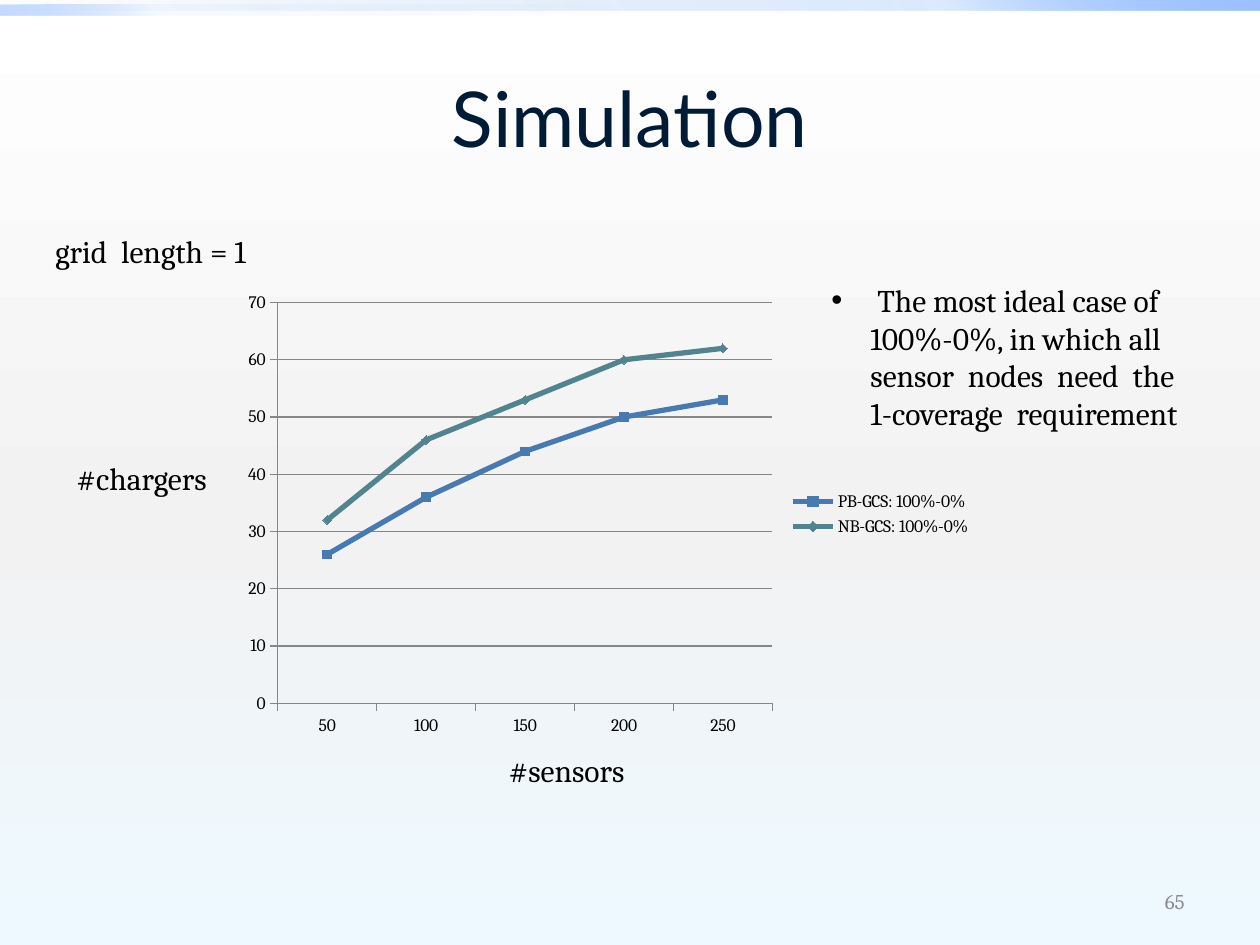
from lxml.etree import SubElement
from pptx import Presentation
from pptx.chart.data import CategoryChartData
from pptx.dml.color import RGBColor
from pptx.enum.chart import XL_CHART_TYPE, XL_LEGEND_POSITION, XL_MARKER_STYLE, XL_TICK_MARK
from pptx.enum.shapes import MSO_SHAPE
from pptx.enum.text import MSO_ANCHOR, PP_ALIGN
from pptx.oxml.ns import qn
from pptx.util import Inches, Pt

BODY_FONT = "Cambria"
AXIS_COLOR = "868686"

# Gradient stops: position %, colour, opacity %
BACKGROUND = [(0, "FFFFFF", 100), (55, "F2F2F2", 100), (100, "EEF9FF", 100)]
BARS = [
    ((0, 0, 10, 0.08), [(0, "0058B7", 0), (75, "4F95FF", 20), (100, "9EC2FF", 100)], 315),
    ((0, 0.04, 5, 0.08), [(0, "0058B7", 0), (75, "4F95FF", 5), (100, "9EC2FF", 60)], 135),
]

TITLE = ("Simulation", (0.5, 0.3, 9, 1.25))
LABELS = [
    ("grid  length = 1", (0.34, 1.79, 1.99, 0.4)),
    ("#chargers", (0.51, 3.59, 1.42, 0.4)),
    ("#sensors", (3.94, 5.91, 1.34, 0.4)),
]
REMARK = (
    " The most ideal case of 100%-0%, in which all sensor  nodes  need  the  1-coverage  requirement",
    (6.5, 2.18, 3.19, 1.31),
)
PAGE_NUMBER = ("65", (7.17, 6.95, 2.33, 0.4))

CHART_BOX = (1.85, 2.25, 5.96, 3.66)
SENSORS = ["50", "100", "150", "200", "250"]
SERIES = [
    ("PB-GCS: 100%-0%", [26, 36, 44, 50, 53], "477AB1", XL_MARKER_STYLE.SQUARE),
    ("NB-GCS: 100%-0%", [32, 46, 53, 60, 62], "51848E", XL_MARKER_STYLE.DIAMOND),
]


def rgb(color):
    return RGBColor.from_string(color)


def place(box):
    return [Inches(length) for length in box]


def fill_gradient(owner, element, stops, angle):
    """Fill the owner with a gradient; angle is in clockwise degrees."""
    owner.fill.solid()
    solid = element.find(".//" + qn("a:solidFill"))
    gradient = solid.makeelement(qn("a:gradFill"), {"rotWithShape": "1"})
    stop_list = SubElement(gradient, qn("a:gsLst"))
    for position, color, opacity in stops:
        stop = SubElement(stop_list, qn("a:gs"), pos=str(position * 1000))
        color_element = SubElement(stop, qn("a:srgbClr"), val=color)
        if opacity < 100:
            SubElement(color_element, qn("a:alpha"), val=str(opacity * 1000))
    SubElement(gradient, qn("a:lin"), ang=str(angle * 60000), scaled="0")
    solid.getparent().replace(solid, gradient)


def add_text(slide, text, box, size=18, color="000000", font=BODY_FONT,
             align=PP_ALIGN.LEFT, anchor=MSO_ANCHOR.TOP, bullet=None):
    text_frame = slide.shapes.add_textbox(*place(box)).text_frame
    text_frame.word_wrap = True
    text_frame.vertical_anchor = anchor
    text_frame.text = text
    paragraph = text_frame.paragraphs[0]
    paragraph.alignment = align
    if bullet:
        properties = paragraph._p.get_or_add_pPr()
        properties.set("marL", str(Inches(0.31)))
        properties.set("indent", str(-Inches(0.31)))
        SubElement(properties, qn("a:buFont"), typeface="Arial")
        SubElement(properties, qn("a:buChar"), char=bullet)
    run_font = paragraph.runs[0].font
    run_font.name = font
    run_font.size = Pt(size)
    run_font.color.rgb = rgb(color)


def add_line_chart(slide):
    data = CategoryChartData()
    data.categories = SENSORS
    for name, values, _, _ in SERIES:
        data.add_series(name, values)
    chart = slide.shapes.add_chart(XL_CHART_TYPE.LINE_MARKERS, *place(CHART_BOX), data).chart
    chart.has_title = False
    chart.font.name = BODY_FONT
    chart.font.size = Pt(10)
    chart.font.color.rgb = rgb("000000")
    chart.has_legend = True
    chart.legend.position = XL_LEGEND_POSITION.RIGHT
    chart.legend.include_in_layout = False

    chart.value_axis.has_major_gridlines = True
    chart.value_axis.minimum_scale = 0
    chart.value_axis.maximum_scale = 70
    chart.value_axis.major_unit = 10
    for axis in (chart.category_axis, chart.value_axis):
        axis.major_tick_mark = XL_TICK_MARK.OUTSIDE
        axis.minor_tick_mark = XL_TICK_MARK.NONE
    for part in (chart.category_axis, chart.value_axis, chart.value_axis.major_gridlines):
        part.format.line.color.rgb = rgb(AXIS_COLOR)
        part.format.line.width = Pt(0.75)

    plot = chart.plots[0]
    plot.vary_by_categories = False
    for series, (_, _, color, marker_style) in zip(plot.series, SERIES):
        series.smooth = False
        series.format.line.color.rgb = rgb(color)
        series.format.line.width = Pt(3)
        series.marker.style = marker_style
        series.marker.size = 5
        series.marker.format.fill.solid()
        series.marker.format.fill.fore_color.rgb = rgb(color)
        series.marker.format.line.color.rgb = rgb(color)


def main():
    presentation = Presentation()
    presentation.slide_width = Inches(10)
    presentation.slide_height = Inches(7.5)
    slide = presentation.slides.add_slide(presentation.slide_layouts[6])
    fill_gradient(slide.background, slide.element, BACKGROUND, 90)

    for box, stops, angle in BARS:
        bar = slide.shapes.add_shape(MSO_SHAPE.RECTANGLE, *place(box))
        bar.shadow.inherit = False
        bar.line.fill.background()
        fill_gradient(bar, bar.element, stops, angle)

    add_text(slide, *TITLE, size=44, color="001B36", font="Lato",
             align=PP_ALIGN.CENTER, anchor=MSO_ANCHOR.MIDDLE)
    add_line_chart(slide)
    for text, box in LABELS:
        add_text(slide, text, box)
    add_text(slide, *REMARK, bullet="•")
    add_text(slide, *PAGE_NUMBER, size=12, color="8C8C8C",
             align=PP_ALIGN.RIGHT, anchor=MSO_ANCHOR.MIDDLE)
    presentation.save("out.pptx")


if __name__ == "__main__":
    main()
